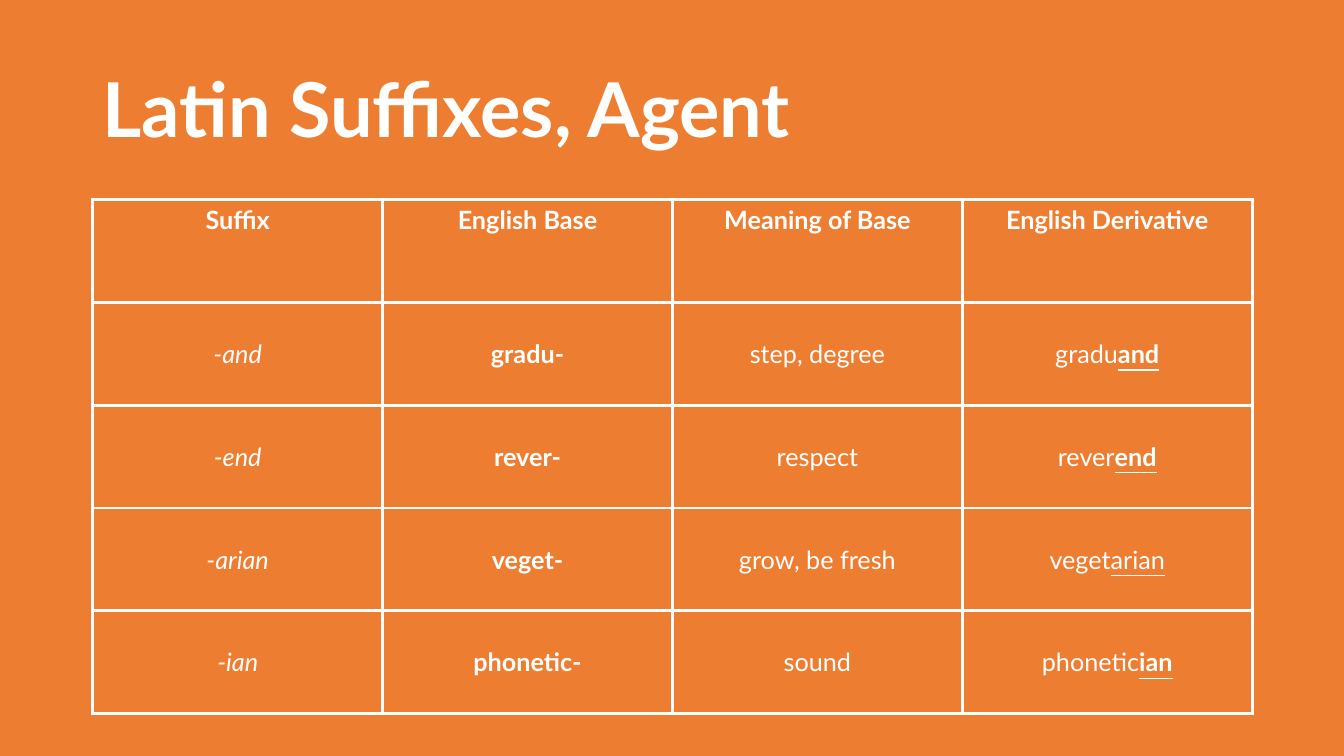
from lxml import etree
from pptx import Presentation
from pptx.dml.color import RGBColor
from pptx.enum.text import MSO_ANCHOR, PP_ALIGN
from pptx.oxml.ns import qn
from pptx.util import Inches, Pt

TOP, MIDDLE = MSO_ANCHOR.TOP, MSO_ANCHOR.MIDDLE
LEFT, CENTER = PP_ALIGN.LEFT, PP_ALIGN.CENTER

TITLE = "Latin Suffixes, Agent"
HEADINGS = ["Suffix", "English Base", "Meaning of Base", "English Derivative"]
# suffix, base, meaning, whether the suffix is bold in the derivative
SUFFIXES = [
    ("and", "gradu", "step, degree", True),
    ("end", "rever", "respect", True),
    ("arian", "veget", "grow, be fresh", False),
    ("ian", "phonetic", "sound", True),
]

FONT = "Lato"
ORANGE, WHITE = "ED7D31", "FFFFFF"
BOLD, ITALIC = {"bold": True}, {"italic": True}
WIDTH, HEIGHT = 13.33, 7.5
MARGIN = 0.92
CONTENT_WIDTH = 11.5
TITLE_TOP, TITLE_HEIGHT = 0.4, 1.45
TABLE_TOP, ROW_HEIGHT = 1.98, 1.02
TITLE_SIZE, TABLE_SIZE = 54, 18
BORDER_WIDTH = 2.25


def color(hex_string):
    return RGBColor.from_string(hex_string)


def write(frame, runs, size, align):
    """Fill the first paragraph with (text, format values) runs."""
    paragraph = frame.paragraphs[0]
    paragraph.alignment = align
    for text, formats in runs:
        run = paragraph.add_run()
        run.text = text
        run.font.name = FONT
        run.font.size = Pt(size)
        run.font.color.rgb = color(WHITE)
        for attribute, value in {"bold": False, **formats}.items():
            setattr(run.font, attribute, value)
    return paragraph


def add_borders(cell):
    properties = cell._tc.get_or_add_tcPr()
    for side in ("lnL", "lnR", "lnT", "lnB"):
        line = etree.SubElement(properties, qn(f"a:{side}"), w=str(Pt(BORDER_WIDTH)))
        fill = etree.SubElement(line, qn("a:solidFill"))
        etree.SubElement(fill, qn("a:srgbClr"), val=WHITE)


def suffix_row(suffix, base, meaning, suffix_bold):
    ending = {"bold": suffix_bold, "underline": True}
    return [
        [(f"-{suffix}", ITALIC)],
        [(f"{base}-", BOLD)],
        [(meaning, {})],
        [(base, {}), (suffix, ending)],
    ]


def add_title(slide):
    title = slide.shapes.add_textbox(
        Inches(MARGIN), Inches(TITLE_TOP), Inches(CONTENT_WIDTH), Inches(TITLE_HEIGHT))
    title.text_frame.word_wrap = True
    title.text_frame.vertical_anchor = MIDDLE
    write(title.text_frame, [(TITLE, BOLD)], TITLE_SIZE, LEFT).line_spacing = 0.9


def add_suffix_table(slide):
    rows = [[[(heading, BOLD)] for heading in HEADINGS]]
    rows += [suffix_row(*entry) for entry in SUFFIXES]
    table = slide.shapes.add_table(
        len(rows), len(HEADINGS), Inches(MARGIN), Inches(TABLE_TOP),
        Inches(CONTENT_WIDTH), Inches(ROW_HEIGHT * len(rows))).table
    table.first_row = table.horz_banding = False
    for row_index, row in enumerate(rows):
        for column_index, runs in enumerate(row):
            cell = table.cell(row_index, column_index)
            add_borders(cell)
            cell.fill.background()
            cell.vertical_anchor = MIDDLE if row_index else TOP
            write(cell.text_frame, runs, TABLE_SIZE, CENTER)


def main():
    deck = Presentation()
    deck.slide_width, deck.slide_height = Inches(WIDTH), Inches(HEIGHT)
    slide = deck.slides.add_slide(deck.slide_layouts[6])
    slide.background.fill.solid()
    slide.background.fill.fore_color.rgb = color(ORANGE)
    add_title(slide)
    add_suffix_table(slide)
    deck.save("out.pptx")


if __name__ == "__main__":
    main()
